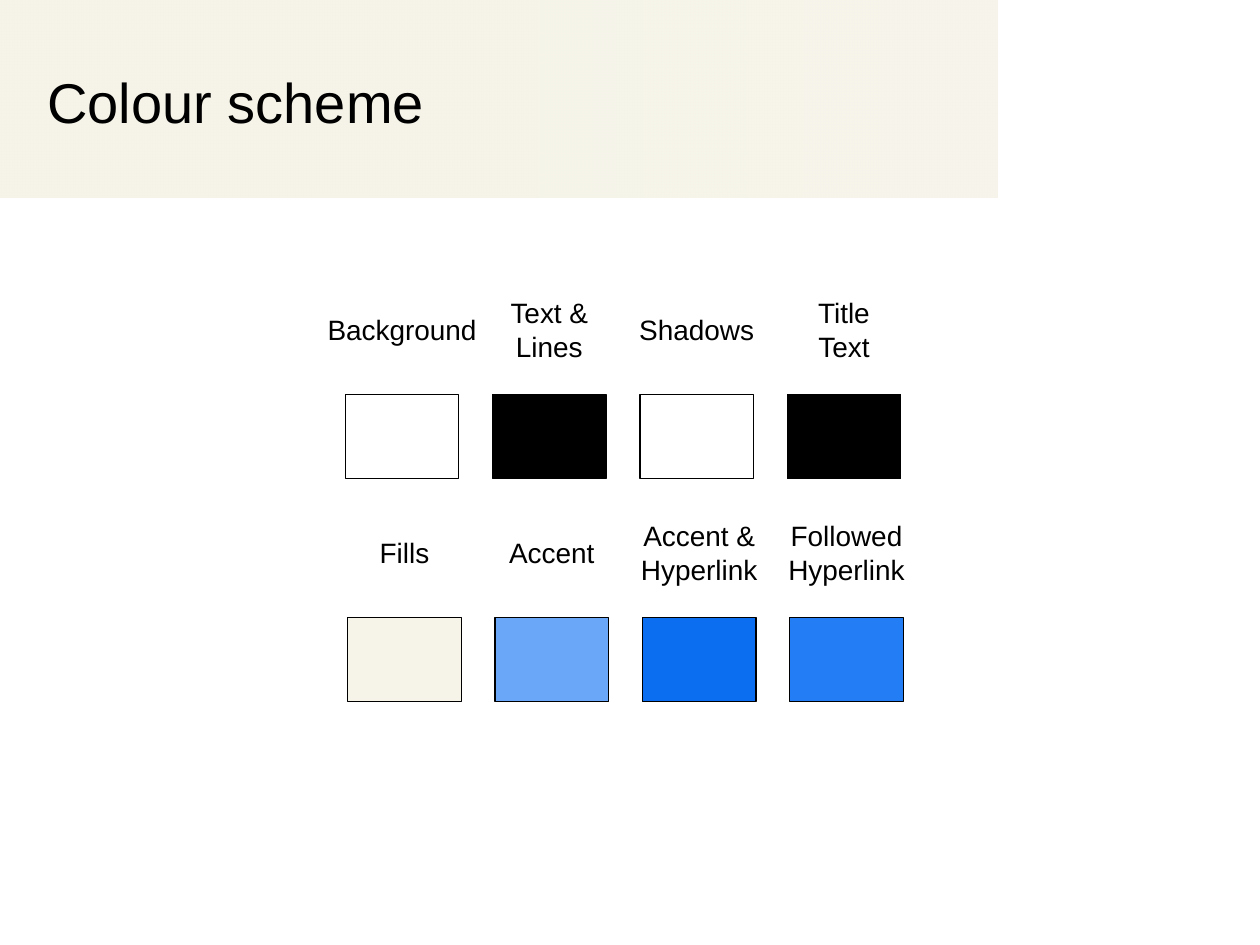
from lxml.etree import SubElement
from pptx import Presentation
from pptx.dml.color import RGBColor
from pptx.enum.shapes import MSO_SHAPE as SHAPE
from pptx.enum.text import MSO_ANCHOR as ANCHOR, MSO_AUTO_SIZE as AUTO, PP_ALIGN as ALIGN
from pptx.oxml.ns import qn
from pptx.util import Cm, Pt

FONT, BLACK, CREAM = "Arial", "000000", "F6F4E8"

# left edge of the first swatch, top of the row, (label, label width, colour)
ROWS = [
    (6.96, 7.95, [("Background", 3.55, "FFFFFF"), ("Text &\nLines", 2.13, BLACK),
                  ("Shadows", 2.85, "FFFFFF"), ("Title\nText", 1.6, BLACK)]),
    (7.01, 12.45, [("Fills", 1.52, CREAM), ("Accent", 2.26, "6BA7F8"),
                   ("Accent &\nHyperlink", 2.9, "0B6DEF"),
                   ("Followed\nHyperlink", 2.9, "237DF5")]),
]
SWATCH_W, SWATCH_H, PITCH = 2.29, 1.7, 2.97
LABEL_RISE = 1.31  # from label centre down to swatch top
LABEL_HEIGHTS = {1: 0.94, 2: 1.63}


def rgb(value):
    return RGBColor.from_string(value)


def write(tf, text, size, align, wrap=True):
    tf.text = text
    tf.word_wrap = wrap
    tf.vertical_anchor = ANCHOR.MIDDLE
    for p in tf.paragraphs:
        p.alignment = align
        for r in p.runs:
            r.font.name, r.font.size = FONT, Pt(size)
            r.font.color.rgb = rgb(BLACK)


def add_rect(s, x, y, w, h):
    sp = s.shapes.add_shape(SHAPE.RECTANGLE, Cm(x), Cm(y), Cm(w), Cm(h))
    sp.shadow.inherit = False
    return sp


def add_band(s):
    """Add the faintly fading title band behind everything else."""
    band = add_rect(s, 0, 0, 20.1, 3.99)
    band.line.fill.background()
    band.fill.gradient()
    band.fill.gradient_angle = 0
    for stop in band.fill.gradient_stops:
        stop.color.rgb = rgb(CREAM)
    last_color = list(band.element.iter(qn("a:srgbClr")))[-1]
    SubElement(last_color, qn("a:alpha")).set("val", "85000")
    s.shapes._spTree.insert(2, band.element)


def add_swatch(s, x, y, color):
    sp = add_rect(s, x, y, SWATCH_W, SWATCH_H)
    sp.fill.solid()
    sp.fill.fore_color.rgb = rgb(color)
    sp.line.color.rgb = rgb(BLACK)
    sp.line.width = Pt(0.75)


def add_label(s, center_x, center_y, width, text):
    height = LABEL_HEIGHTS[len(text.split("\n"))]
    box = s.shapes.add_textbox(Cm(center_x - width / 2), Cm(center_y - height / 2),
                               Cm(width), Cm(height))
    write(box.text_frame, text, 16, ALIGN.CENTER, wrap=False)
    box.text_frame.auto_size = AUTO.SHAPE_TO_FIT_TEXT


def main():
    prs = Presentation()
    prs.slide_width, prs.slide_height = Cm(25.4), Cm(19.05)
    s = prs.slides.add_slide(prs.slide_layouts[5])
    add_band(s)

    title = s.shapes.title
    title.left, title.top, title.width, title.height = Cm(0.7), Cm(0.76), Cm(19), Cm(2.57)
    write(title.text_frame, "Colour scheme", 32, ALIGN.LEFT)

    for left, top, swatches in ROWS:
        for i, (label, width, color) in enumerate(swatches):
            x = left + i * PITCH
            add_swatch(s, x, top, color)
            add_label(s, x + SWATCH_W / 2, top - LABEL_RISE, width, label)

    prs.save("out.pptx")


if __name__ == "__main__":
    main()
